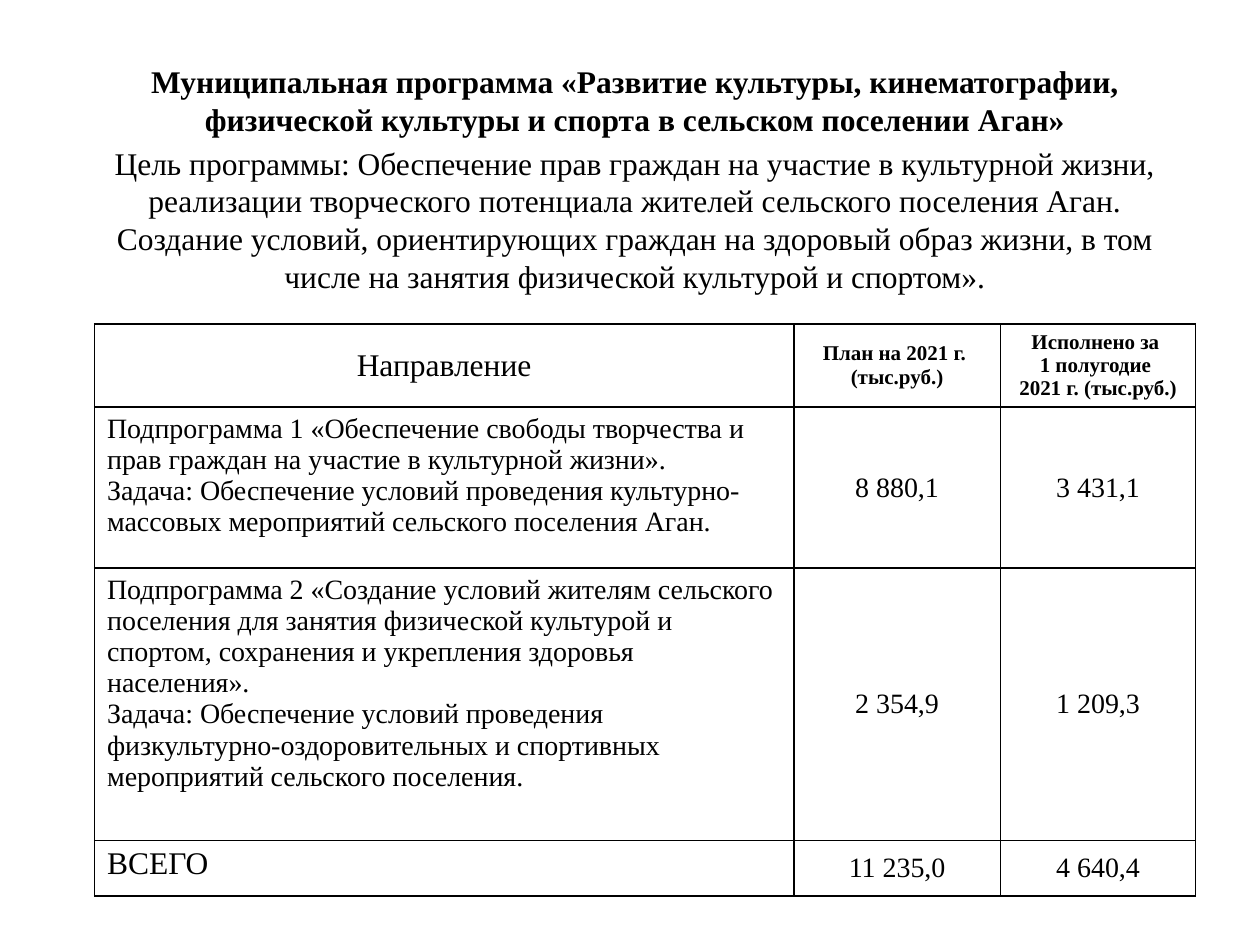
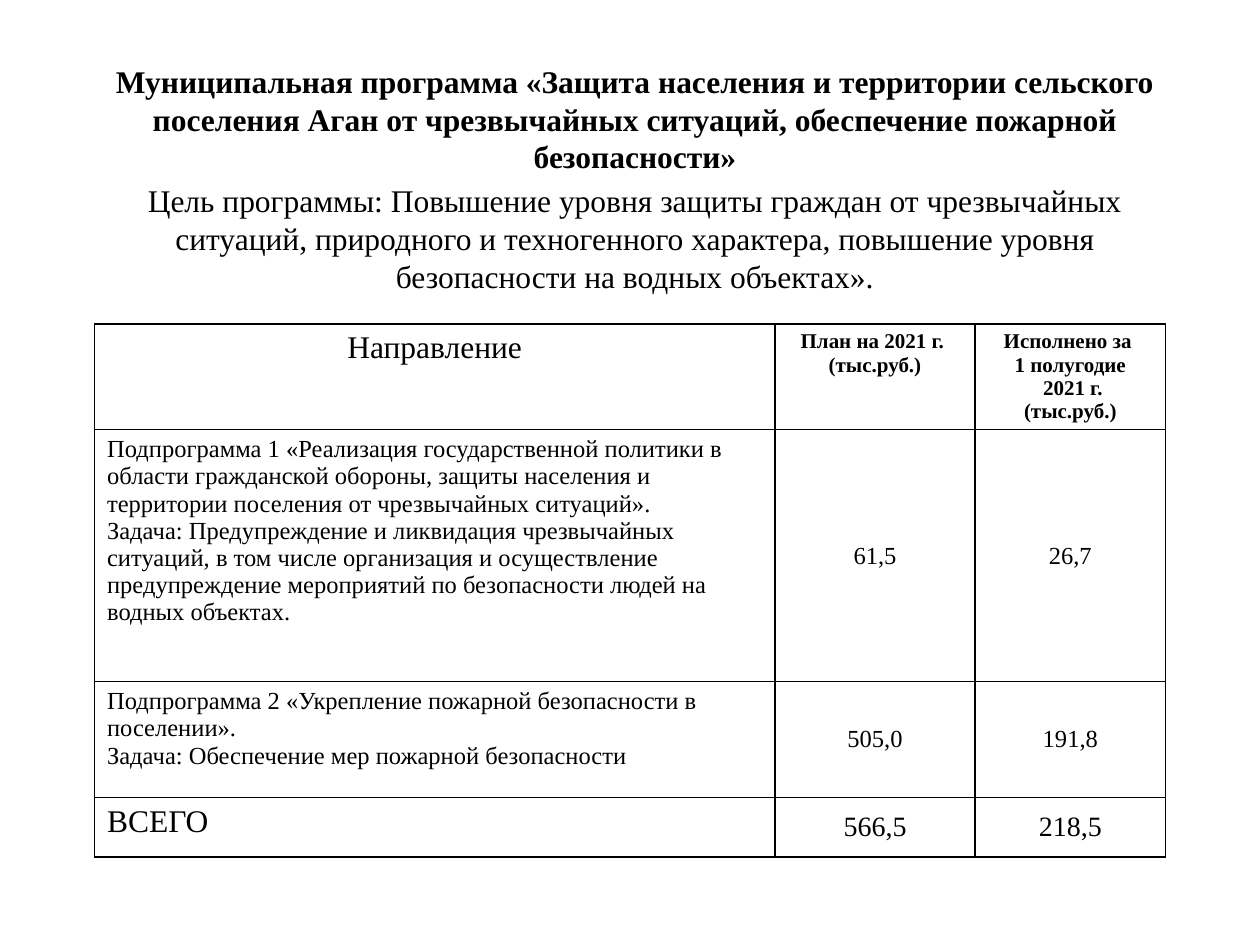
from dataclasses import dataclass

from lxml.etree import SubElement
from pptx import Presentation
from pptx.dml.color import RGBColor
from pptx.enum.text import MSO_ANCHOR as Anchor, MSO_AUTO_SIZE as AutoSize, PP_ALIGN as Align
from pptx.oxml.ns import qn
from pptx.util import Inches, Pt


@dataclass(frozen=True)
class Theme:
    font: str = "Times New Roman"
    ink: RGBColor = RGBColor(0, 0, 0)
    paper: RGBColor = RGBColor(255, 255, 255)
    large: int = 18
    value: int = 16
    caption: int = 12
    border: float = 1


@dataclass(frozen=True)
class Program:
    name: str
    goal: str
    period: str
    subprograms: list
    total: tuple
    column_widths: tuple
    row_heights: tuple
    detail_size: int
    header_anchor: Anchor


THEME = Theme()
LEFT, HEADING_TOP, TABLE_TOP = 0.75, 0.44, 2.57
HEADING_WIDTH, HEADING_HEIGHT = 8.58, 6.69

PROGRAMS = [
    Program(
        name="Муниципальная программа «Развитие культуры, кинематографии, "
             "физической культуры и спорта в сельском поселении Аган»",
        goal="Цель программы: Обеспечение прав граждан на участие в культурной жизни, "
             "реализации творческого потенциала жителей сельского поселения Аган. "
             "Создание условий, ориентирующих граждан на здоровый образ жизни, "
             "в том числе на занятия физической культурой и спортом».",
        period="Исполнено за \n1 полугодие \n2021 г. (тыс.руб.)",
        subprograms=[
            ("Подпрограмма 1 «Обеспечение свободы творчества и прав граждан "
             "на участие в культурной жизни».\n"
             "Задача: Обеспечение условий проведения культурно-массовых мероприятий "
             "сельского поселения Аган.", "8 880,1", "3 431,1"),
            ("Подпрограмма 2 «Создание условий жителям сельского поселения для занятия "
             "физической культурой и спортом, сохранения и укрепления здоровья населения».\n"
             "Задача: Обеспечение условий проведения физкультурно-оздоровительных "
             "и спортивных мероприятий сельского поселения.", "2 354,9", "1 209,3"),
        ],
        total=("ВСЕГО", "11 235,0", "4 640,4"),
        column_widths=(5.55, 1.64, 1.55),
        row_heights=(0.66, 1.28, 2.16, 0.44),
        detail_size=16,
        header_anchor=Anchor.MIDDLE,
    ),
    Program(
        name="Муниципальная программа «Защита населения и территории сельского поселения "
             "Аган от чрезвычайных ситуаций, обеспечение пожарной безопасности»",
        goal="Цель программы: Повышение уровня защиты граждан от чрезвычайных ситуаций, "
             "природного и техногенного характера, повышение уровня безопасности "
             "на водных объектах».",
        period="Исполнено за \n1 полугодие\n 2021 г.\n(тыс.руб.)",
        subprograms=[
            ("Подпрограмма 1 «Реализация государственной политики в области гражданской "
             "обороны, защиты населения и территории поселения от чрезвычайных ситуаций».\n"
             "Задача: Предупреждение и ликвидация чрезвычайных ситуаций, в том числе "
             "организация и осуществление предупреждение мероприятий по безопасности "
             "людей на водных объектах.", "61,5", "26,7"),
            ("Подпрограмма 2 «Укрепление пожарной безопасности в поселении».\n"
             "Задача: Обеспечение мер пожарной безопасности", "505,0", "191,8"),
        ],
        total=("ВСЕГО", "566,5", "218,5"),
        column_widths=(5.4, 1.59, 1.51),
        row_heights=(0.84, 2, 0.92, 0.47),
        detail_size=14,
        header_anchor=Anchor.TOP,
    ),
]


def format_paragraph(paragraph, size, bold=False, align=Align.CENTER):
    paragraph.alignment = align
    for run in paragraph.runs:
        run.font.name = THEME.font
        run.font.size = Pt(size)
        run.font.bold = bold
        run.font.color.rgb = THEME.ink


def add_borders(cell):
    properties = cell._tc.get_or_add_tcPr()
    for position, side in enumerate(("a:lnL", "a:lnR", "a:lnT", "a:lnB")):
        line = SubElement(properties, qn(side), w=str(Pt(THEME.border)))
        fill = SubElement(line, qn("a:solidFill"))
        SubElement(fill, qn("a:srgbClr"), val=str(THEME.ink))
        properties.insert(position, line)  # borders must precede the cell fill


def fill_cell(cell, text, size, bold=False, align=Align.CENTER, anchor=Anchor.MIDDLE):
    cell.text_frame.text = text
    cell.vertical_anchor = anchor
    cell.fill.solid()
    cell.fill.fore_color.rgb = THEME.paper
    for paragraph in cell.text_frame.paragraphs:
        format_paragraph(paragraph, size, bold, align)
    add_borders(cell)


def add_heading(slide, program):
    heading = slide.placeholders[1]
    heading.left, heading.top = Inches(LEFT), Inches(HEADING_TOP)
    heading.width, heading.height = Inches(HEADING_WIDTH), Inches(HEADING_HEIGHT)
    text_frame = heading.text_frame
    text_frame.auto_size = AutoSize.NONE
    text_frame.vertical_anchor = Anchor.TOP
    text_frame.text = f"{program.name}\n{program.goal}"
    name, goal = text_frame.paragraphs
    format_paragraph(name, THEME.large, bold=True)
    format_paragraph(goal, THEME.large)


def add_budget_table(slide, program):
    widths, heights = program.column_widths, program.row_heights
    table = slide.shapes.add_table(
        len(heights), len(widths), Inches(LEFT), Inches(TABLE_TOP),
        Inches(sum(widths)), Inches(sum(heights))).table
    table.first_row = table.horz_banding = False
    for column, width in zip(table.columns, widths):
        column.width = Inches(width)
    for row, height in zip(table.rows, heights):
        row.height = Inches(height)

    header = ("Направление", "План на 2021 г. \n(тыс.руб.)", program.period)
    for column, text in enumerate(header):
        size = THEME.caption if column else THEME.large
        fill_cell(table.cell(0, column), text, size, bold=column > 0,
                  anchor=program.header_anchor)

    body = [(record, program.detail_size, program.detail_size)
            for record in program.subprograms]
    body.append((program.total, THEME.large, THEME.value))
    for row, ((label, *amounts), label_size, amount_size) in enumerate(body, start=1):
        fill_cell(table.cell(row, 0), label, label_size, align=Align.LEFT, anchor=Anchor.TOP)
        for column, amount in enumerate(amounts, start=1):
            fill_cell(table.cell(row, column), amount, amount_size)


def add_program_slide(presentation, program):
    slide = presentation.slides.add_slide(presentation.slide_layouts[0])
    title = slide.shapes.title.element
    title.getparent().remove(title)
    add_heading(slide, program)
    add_budget_table(slide, program)


def main():
    presentation = Presentation()
    presentation.slide_width, presentation.slide_height = Inches(10), Inches(7.5)
    for program in PROGRAMS:
        add_program_slide(presentation, program)
    presentation.save("out.pptx")


if __name__ == "__main__":
    main()
